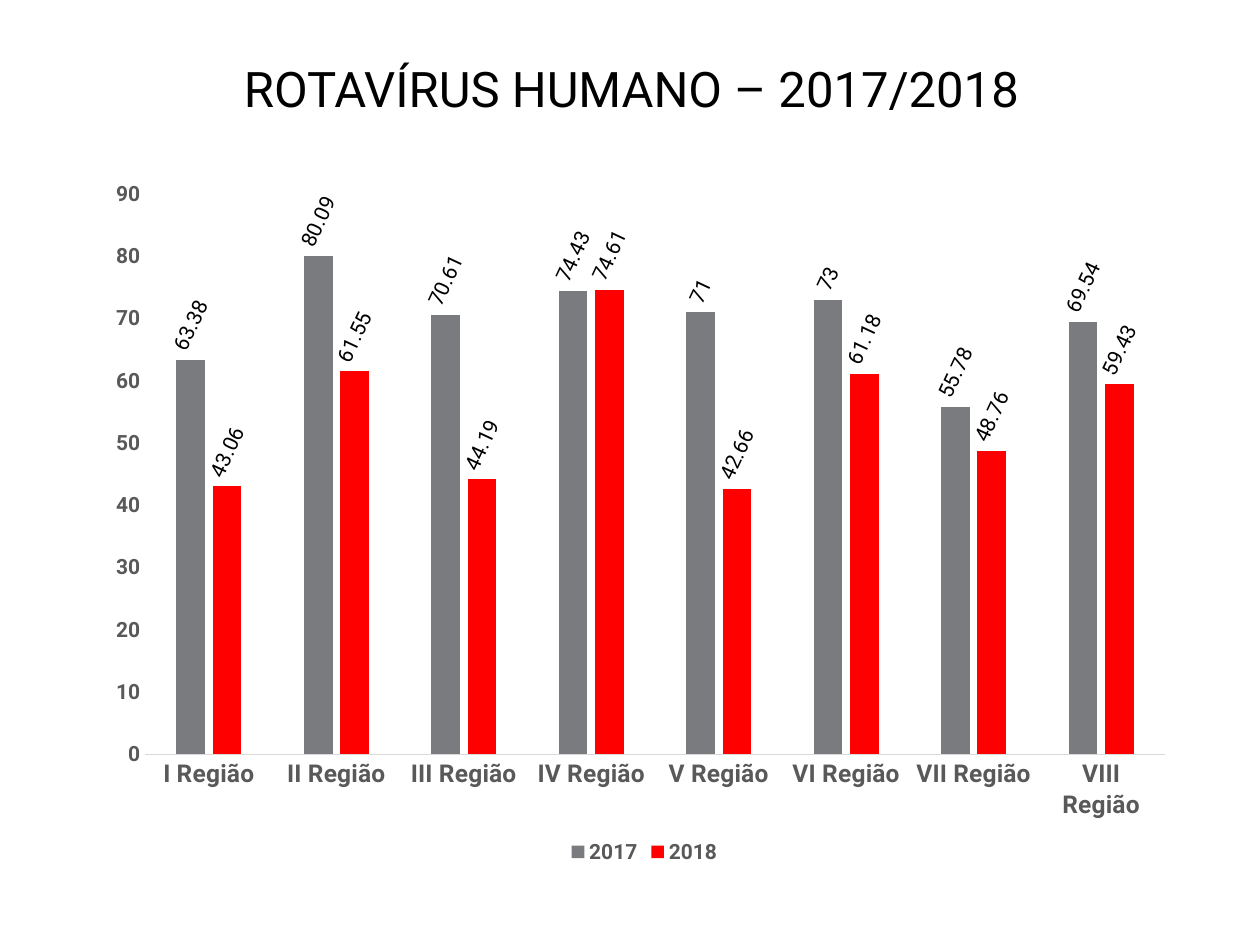
from dataclasses import dataclass

import pptx
import pptx.chart.data
import pptx.dml.color
import pptx.enum.chart
import pptx.enum.text
import pptx.oxml
import pptx.oxml.ns
import pptx.util
from pptx.util import Inches

FONT = "Roboto"
COLORS = {"text": "000000", "axis": "595959", "line": "D9D9D9",
          "2017": "797B7E", "2018": "FF0000"}
LABEL_ANGLE = -65
PLOT_LAYOUT = {"x": 0.03, "y": 0.06, "w": 0.96, "h": 0.78}


@dataclass
class YearSeries:
    name: str
    values: tuple[float, ...]


REGIONS = [f"{n} Região" for n in "I II III IV V VI VII VIII".split()]
YEARS = [
    YearSeries("2017", (63.38, 80.09, 70.61, 74.43, 71, 73, 55.78, 69.54)),
    YearSeries("2018", (43.06, 61.55, 44.19, 74.61, 42.66, 61.18, 48.76, 59.43)),
]


def rgb(key: str) -> pptx.dml.color.RGBColor:
    return pptx.dml.color.RGBColor.from_string(COLORS[key])


def set_font(font, size: float, color: str, bold: bool = False) -> None:
    values = {"name": FONT, "size": pptx.util.Pt(size), "bold": bold}
    for name, value in values.items():
        setattr(font, name, value)
    font.color.rgb = rgb(color)


def place_plot(chart, layout: dict[str, float]) -> None:
    """Fix the inner plot area as fractions of the chart."""
    area = chart.plots[0]._element.getparent()
    for old in area.findall(pptx.oxml.ns.qn("c:layout")):
        area.remove(old)
    modes = "".join(f'<c:{k}Mode val="edge"/>' for k in "xy")
    sizes = "".join(f'<c:{k} val="{v}"/>' for k, v in layout.items())
    area.insert(0, pptx.oxml.parse_xml(
        f'<c:layout {pptx.oxml.ns.nsdecls("c")}><c:manualLayout>'
        f'<c:layoutTarget val="inner"/>{modes}{sizes}'
        '</c:manualLayout></c:layout>'))


def style_axis(axis, size: float) -> None:
    axis.has_major_gridlines = False
    axis.major_tick_mark = axis.minor_tick_mark = pptx.enum.chart.XL_TICK_MARK.NONE
    set_font(axis.tick_labels.font, size, "axis", True)


def style_series(series) -> None:
    series.format.fill.solid()
    series.format.fill.fore_color.rgb = rgb(series.name)
    series.invert_if_negative = False
    labels = series.data_labels
    labels.show_value = True
    labels.position = pptx.enum.chart.XL_LABEL_POSITION.OUTSIDE_END
    set_font(labels.font, 12, "text")
    body = labels._element.find(".//" + pptx.oxml.ns.qn("a:bodyPr"))
    body.set("rot", str(LABEL_ANGLE * 60000))
    body.set("vert", "horz")


def add_region_chart(s) -> None:
    data = pptx.chart.data.CategoryChartData()
    data.categories = REGIONS
    for year in YEARS:
        data.add_series(year.name, year.values)
    chart = s.shapes.add_chart(
        pptx.enum.chart.XL_CHART_TYPE.COLUMN_CLUSTERED,
        Inches(0.9), Inches(1.2), Inches(8.43), Inches(5.7), data).chart
    set_font(chart.font, 10, "text")
    chart.has_title = False
    place_plot(chart, PLOT_LAYOUT)

    # Columns
    plot = chart.plots[0]
    plot.vary_by_categories = False
    plot.gap_width, plot.overlap = 219, -27
    for series in plot.series:
        style_series(series)

    # Axes
    style_axis(chart.category_axis, 14)
    chart.category_axis.format.line.color.rgb = rgb("line")
    chart.category_axis.format.line.width = pptx.util.Pt(0.75)
    value_axis = chart.value_axis
    style_axis(value_axis, 12)
    value_axis.format.line.fill.background()
    value_axis.minimum_scale, value_axis.maximum_scale = 0, 90
    value_axis.major_unit = 10

    # Legend
    chart.has_legend = True
    chart.legend.position = pptx.enum.chart.XL_LEGEND_POSITION.BOTTOM
    chart.legend.include_in_layout = False
    set_font(chart.legend.font, 12, "axis", True)


def add_title(s, text: str) -> None:
    title = s.shapes.title
    box = {"left": 0.9, "top": 0.4, "width": 8.22, "height": 0.6}
    for name, value in box.items():
        setattr(title, name, Inches(value))
    tf = title.text_frame
    tf.vertical_anchor = pptx.enum.text.MSO_ANCHOR.MIDDLE
    p = tf.paragraphs[0]
    p.alignment = pptx.enum.text.PP_ALIGN.CENTER
    r = p.add_run()
    r.text = text
    set_font(r.font, 28, "text")


def main() -> None:
    prs = pptx.Presentation()
    prs.slide_width, prs.slide_height = Inches(10), Inches(7.5)
    s = prs.slides.add_slide(prs.slide_layouts[5])
    add_title(s, "ROTAVÍRUS HUMANO – 2017/2018")
    add_region_chart(s)
    prs.save("out.pptx")


if __name__ == "__main__":
    main()
